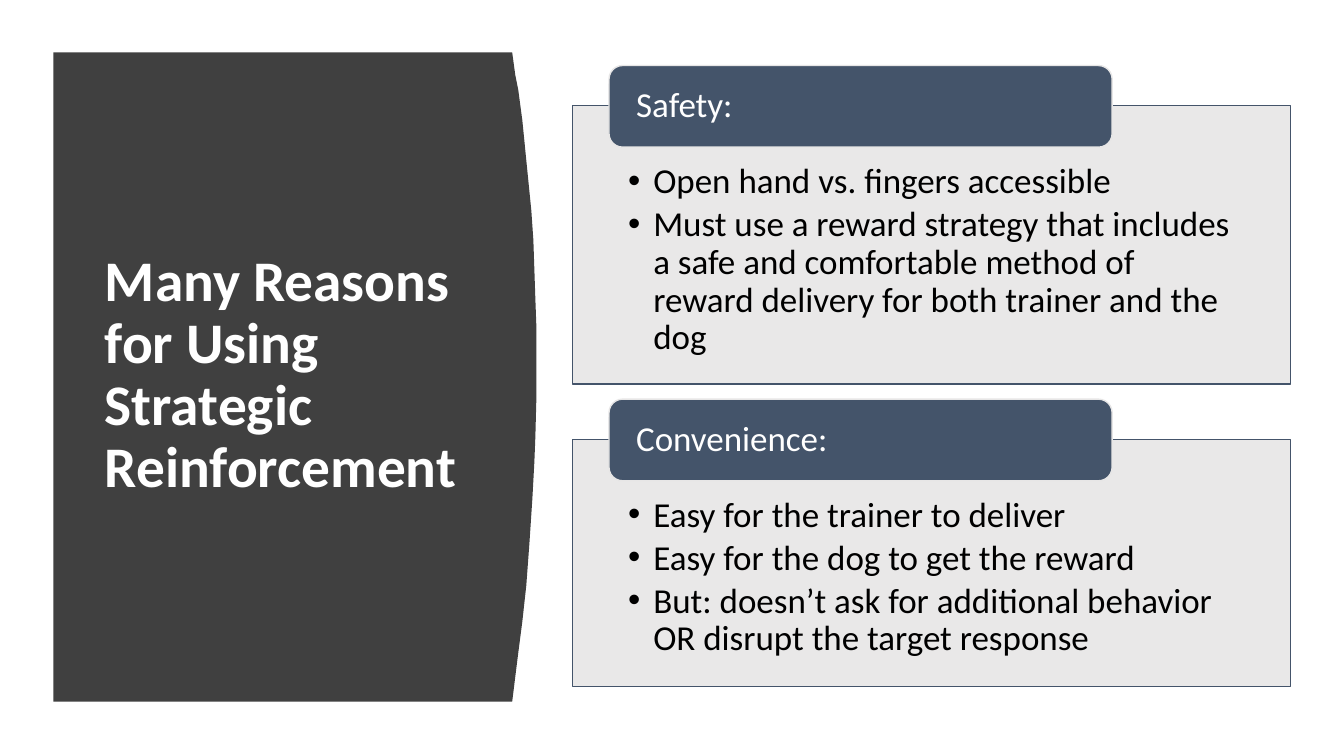
from lxml import etree
from pptx import Presentation
from pptx.dml.color import RGBColor
from pptx.enum.shapes import MSO_SHAPE
from pptx.enum.text import MSO_ANCHOR, MSO_AUTO_SIZE, PP_ALIGN
from pptx.oxml.ns import qn
from pptx.util import Inches, Pt

TITLE = "Many Reasons for Using Strategic Reinforcement"
REASONS = [
    {"heading": "Safety:", "top": 1.05, "height": 2.76, "points": [
        "Open hand vs. fingers accessible",
        "Must use a reward strategy that includes a safe and comfortable method "
        "of reward delivery for both trainer and the dog",
    ]},
    {"heading": "Convenience:", "top": 4.36, "height": 2.45, "points": [
        "Easy for the trainer to deliver",
        "Easy for the dog to get the reward",
        "But: doesn’t ask for additional behavior OR disrupt the target response",
    ]},
]
PANEL_LEFT, PANEL_TOP, PANEL_BOTTOM = 0.53, 0.52, 6.96
PANEL_CURVE = [
    (5.08, 0.52), (5.11, 0.74), (5.14, 0.89), (5.18, 1.19), (5.21, 1.49),
    (5.24, 1.79), (5.27, 2.09), (5.29, 2.38), (5.3, 2.68), (5.31, 2.97),
    (5.32, 3.25), (5.32, 3.94), (5.31, 4.33), (5.3, 4.58), (5.28, 4.95),
    (5.25, 5.4), (5.22, 5.81), (5.18, 6.17), (5.14, 6.48), (5.11, 6.72),
    (5.08, 6.96),
]
BOX_LEFT, BOX_WIDTH = 5.68, 7.12
TAB_LEFT, TAB_WIDTH, TAB_HEIGHT, TAB_RISE = 6.04, 4.99, 0.81, 0.4

FONT = "Calibri"
CHARCOAL = RGBColor(0x40, 0x40, 0x40)
SLATE = RGBColor(0x44, 0x54, 0x6A)
PALE = RGBColor(0xE7, 0xE6, 0xE6)
WHITE = RGBColor(0xFF, 0xFF, 0xFF)
BLACK = RGBColor(0, 0, 0)


def write(tf, lines, size, color, anchor, insets, after=0, bold=False):
    tf.text = "\n".join(lines)
    tf.word_wrap = True
    tf.auto_size = MSO_AUTO_SIZE.NONE
    tf.vertical_anchor = anchor
    tf.margin_left, tf.margin_top, tf.margin_right, tf.margin_bottom = map(Inches, insets)
    for p in tf.paragraphs:
        p.alignment = PP_ALIGN.LEFT
        p.line_spacing = 0.9
        p.space_after = Pt(after)
        for r in p.runs:
            r.font.name = FONT
            r.font.size = Pt(size)
            r.font.bold = bold
            r.font.color.rgb = color


def add_bullet(p):
    pPr = p._p.get_or_add_pPr()
    pPr.set("marL", str(Inches(0.25)))
    pPr.set("indent", str(Inches(-0.25)))
    etree.SubElement(pPr, qn("a:buFont")).set("typeface", "Arial")
    etree.SubElement(pPr, qn("a:buChar")).set("char", "•")


def add_block(s, kind, box, fill, line):
    sp = s.shapes.add_shape(kind, *map(Inches, box))
    sp.shadow.inherit = False
    sp.fill.solid()
    sp.fill.fore_color.rgb = fill
    sp.line.color.rgb = line
    sp.line.width = Pt(1)
    return sp


def add_panel(s):
    corners = PANEL_CURVE + [(PANEL_LEFT, PANEL_BOTTOM)]
    builder = s.shapes.build_freeform(Inches(PANEL_LEFT), Inches(PANEL_TOP))
    builder.add_line_segments([(Inches(x), Inches(y)) for x, y in corners], close=True)
    panel = builder.convert_to_shape()
    panel.shadow.inherit = False
    panel.fill.solid()
    panel.fill.fore_color.rgb = CHARCOAL
    panel.line.fill.background()
    return panel


def add_reason(s, reason):
    top = reason["top"]
    box = add_block(s, MSO_SHAPE.RECTANGLE,
                    (BOX_LEFT, top, BOX_WIDTH, reason["height"]), PALE, SLATE)
    color = box.fill._xPr.find(qn("a:solidFill"))[0]
    etree.SubElement(color, qn("a:alpha")).set("val", "90000")
    write(box.text_frame, reason["points"], 25, BLACK, MSO_ANCHOR.TOP,
          (0.55, 0.57, 0.55, 0.19), after=3.75)
    for p in box.text_frame.paragraphs:
        add_bullet(p)

    tab = add_block(s, MSO_SHAPE.ROUNDED_RECTANGLE,
                    (TAB_LEFT, top - TAB_RISE, TAB_WIDTH, TAB_HEIGHT), SLATE, PALE)
    write(tab.text_frame, [reason["heading"]], 25, WHITE, MSO_ANCHOR.MIDDLE,
          (0.23, 0, 0.23, 0))


def main():
    prs = Presentation()
    prs.slide_width, prs.slide_height = Inches(13.33), Inches(7.5)
    s = prs.slides.add_slide(prs.slide_layouts[5])

    title = s.shapes.title
    title.left, title.top, title.width, title.height = map(Inches, (0.94, 1.11, 3.74, 5.24))
    write(title.text_frame, [TITLE], 41, WHITE, MSO_ANCHOR.MIDDLE,
          (0.1, 0.05, 0.1, 0.05), bold=True)
    panel = add_panel(s)
    panel.element.addnext(title.element)

    for reason in REASONS:
        add_reason(s, reason)
    prs.save("out.pptx")


if __name__ == "__main__":
    main()
